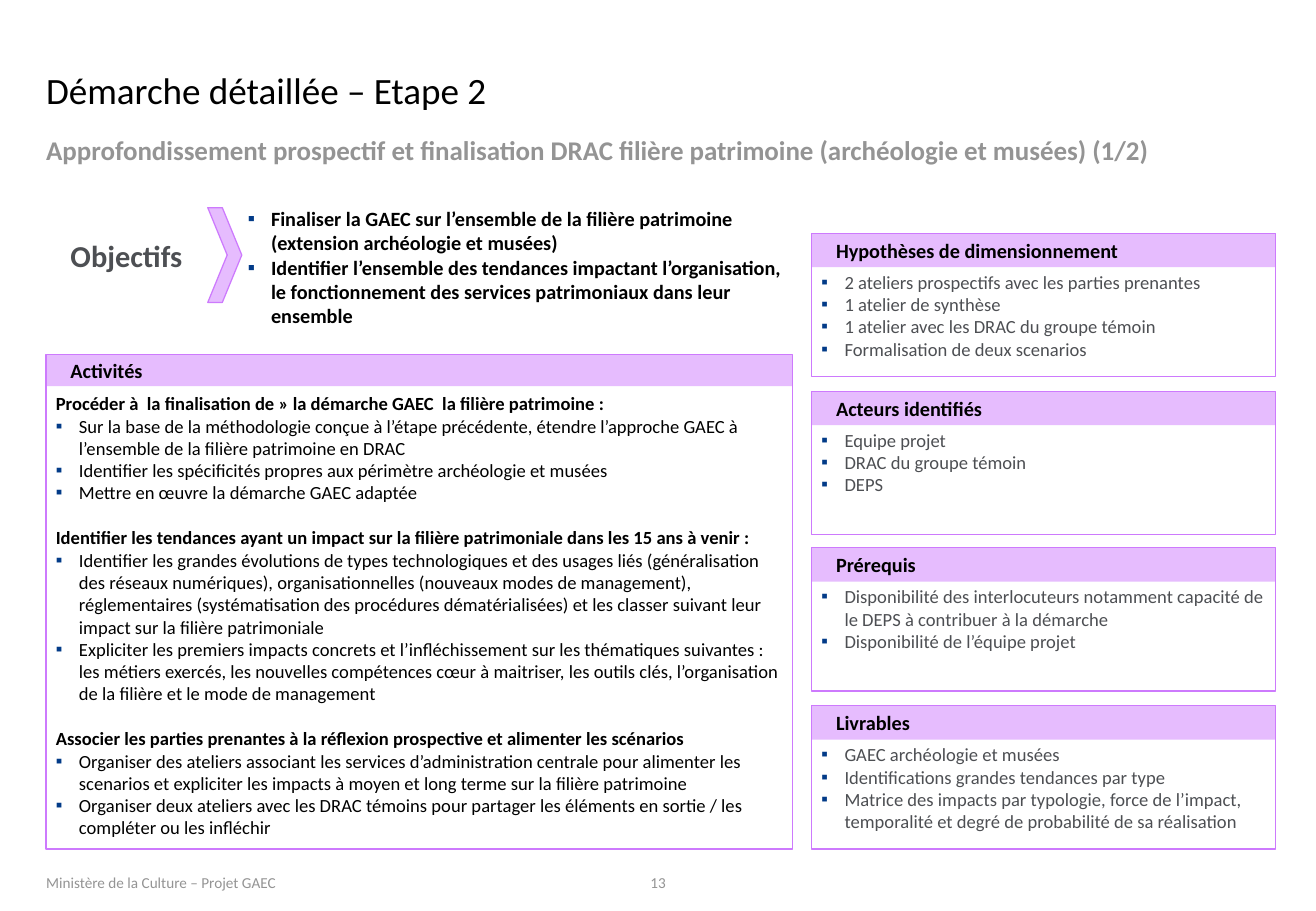
import pptx
import pptx.dml.color
import pptx.enum.shapes
import pptx.enum.text
import pptx.oxml.ns
import pptx.util
from lxml import etree

RGB = pptx.dml.color.RGBColor
SHAPE = pptx.enum.shapes.MSO_SHAPE
ANCHOR = pptx.enum.text.MSO_ANCHOR
ALIGN = pptx.enum.text.PP_ALIGN

BLACK = RGB(0x00, 0x00, 0x00)
WHITE = RGB(0xFF, 0xFF, 0xFF)
GREY = RGB(0x94, 0x94, 0x94)
DARK = RGB(0x4D, 0x4F, 0x53)
NAVY = RGB(0x02, 0x3B, 0x88)
LILAC = RGB(0xE6, 0xBC, 0xFE)
VIOLET = RGB(0xCD, 0x7A, 0xFD)

FONT = "Calibri"
PX = 9144
INDENT = 19
GROUP_GAP = 13.4

OBJECTIVES = [
    "Finaliser la GAEC sur l’ensemble de la filière patrimoine (extension archéologie et musées)",
    "Identifier l’ensemble des tendances impactant l’organisation, le fonctionnement des services patrimoniaux dans leur ensemble",
]
ACTIVITIES = [
    ("Procéder à  la finalisation de » la démarche GAEC  la filière patrimoine :", [
        "Sur la base de la méthodologie conçue à l’étape précédente, étendre l’approche GAEC à l’ensemble de la filière patrimoine en DRAC",
        "Identifier les spécificités propres aux périmètre archéologie et musées",
        "Mettre en œuvre la démarche GAEC adaptée",
    ]),
    ("Identifier les tendances ayant un impact sur la filière patrimoniale dans les 15 ans à venir :", [
        "Identifier les grandes évolutions de types technologiques et des usages liés (généralisation des réseaux numériques), organisationnelles (nouveaux modes de management), réglementaires (systématisation des procédures dématérialisées) et les classer suivant leur impact sur la filière patrimoniale",
        "Expliciter les premiers impacts concrets et l’infléchissement sur les thématiques suivantes : les métiers exercés, les nouvelles compétences cœur à maitriser, les outils clés, l’organisation de la filière et le mode de management",
    ]),
    ("Associer les parties prenantes à la réflexion prospective et alimenter les scénarios", [
        "Organiser des ateliers associant les services d’administration centrale pour alimenter les scenarios et expliciter les impacts à moyen et long terme sur la filière patrimoine",
        "Organiser deux ateliers avec les DRAC témoins pour partager les éléments en sortie / les compléter ou les infléchir",
    ]),
]
SIDE_PANELS = [
    ("Hypothèses de dimensionnement", [
        "2 ateliers prospectifs avec les parties prenantes",
        "1 atelier de synthèse",
        "1 atelier avec les DRAC du groupe témoin",
        "Formalisation de deux scenarios",
    ]),
    ("Acteurs identifiés", ["Equipe projet", "DRAC du groupe témoin", "DEPS"]),
    ("Prérequis", [
        "Disponibilité des interlocuteurs notamment capacité de le DEPS à contribuer à la démarche",
        "Disponibilité de l’équipe projet",
    ]),
    ("Livrables", [
        "GAEC archéologie et musées",
        "Identifications grandes tendances par type",
        "Matrice des impacts par typologie, force de l’impact, temporalité et degré de probabilité de sa réalisation",
    ]),
]


def emu(*lengths):
    return [round(v * PX) for v in lengths]


def setup_frame(sp, margins=(0, 0, 0, 0), anchor=ANCHOR.TOP):
    tf = sp.text_frame
    tf.word_wrap = True
    tf.auto_size = pptx.enum.text.MSO_AUTO_SIZE.NONE
    tf.vertical_anchor = anchor
    tf.margin_left, tf.margin_top, tf.margin_right, tf.margin_bottom = emu(*margins)
    return tf


def add_bullet(p):
    pPr = p._p.get_or_add_pPr()
    indent = INDENT * PX
    pPr.set("marL", str(indent))
    pPr.set("indent", str(-indent))
    qn = pptx.oxml.ns.qn
    color = etree.SubElement(pPr, qn("a:buClr"))
    etree.SubElement(color, qn("a:srgbClr"), val=str(NAVY))
    etree.SubElement(pPr, qn("a:buFont"), typeface=FONT)
    etree.SubElement(pPr, qn("a:buChar"), char="▪")


def add_text(tf, text, size, color, bold=False, bullet=False, align=ALIGN.LEFT, before=0):
    p = tf.paragraphs[0] if not tf.paragraphs[0].runs else tf.add_paragraph()
    if bullet:
        add_bullet(p)
    p.alignment = align
    if before:
        p.space_before = pptx.util.Pt(before)
    r = p.add_run()
    r.text = text
    r.font.name = FONT
    r.font.size = pptx.util.Pt(size)
    r.font.bold = bold
    r.font.color.rgb = color


def style(sp, fill=None, line=None):
    sp.shadow.inherit = False
    if fill is None:
        sp.fill.background()
    else:
        sp.fill.solid()
        sp.fill.fore_color.rgb = fill
    if line is None:
        sp.line.fill.background()
    else:
        sp.line.color.rgb = line
        sp.line.width = pptx.util.Pt(0.75)


def add_label(slide, box, text, size, color, bold=False, anchor=ANCHOR.TOP, align=ALIGN.LEFT):
    sp = slide.shapes.add_textbox(*emu(*box))
    add_text(setup_frame(sp, anchor=anchor), text, size, color, bold, align=align)


def add_heading(slide, x, y, w):
    title = slide.shapes.title
    title.left, title.top, title.width, title.height = emu(x, y, w, 71)
    tf = setup_frame(title, anchor=ANCHOR.BOTTOM)
    add_text(tf, "Démarche détaillée – Etape 2", 22, BLACK)
    add_label(slide, (x, y + 89, w, 37),
              "Approfondissement prospectif et finalisation DRAC filière patrimoine (archéologie et musées) (1/2)",
              16, GREY, bold=True)


def add_objectives(slide, x, y, w, h):
    tag_w = 162
    sp = slide.shapes.add_textbox(*emu(x + tag_w, y - 2, w - tag_w, h))
    tf = setup_frame(sp, (4, 4, 4, 4), ANCHOR.MIDDLE)
    for text in OBJECTIVES:
        add_text(tf, text, 12, BLACK, bold=True, bullet=True)

    tag = slide.shapes.add_shape(SHAPE.PENTAGON, *emu(x, y, tag_w, 87))
    tag.adjustments[0] = 0.11
    style(tag, WHITE)
    add_text(setup_frame(tag, (20, 4, 0, 4), ANCHOR.MIDDLE), "Objectifs", 18, DARK, bold=True)

    left, top = x + 133, y + 4
    outline = [(12, 0), (0, 0), (16, 39), (0, 78), (12, 78)]
    points = [(left + dx, top + dy) for dx, dy in outline]
    fb = slide.shapes.build_freeform(left + 28, top + 39, scale=PX)
    fb.add_line_segments(points, close=True)
    style(fb.convert_to_shape(), LILAC, VIOLET)


def add_panel(slide, box, header_h, title, groups, color):
    x, y, w, h = box
    header = slide.shapes.add_shape(SHAPE.RECTANGLE, *emu(x, y, w, header_h))
    style(header, LILAC)
    add_text(setup_frame(header, (20, 4, 0, 4), ANCHOR.MIDDLE), title, 12, BLACK, bold=True)

    body = slide.shapes.add_shape(SHAPE.RECTANGLE, *emu(x, y, w, h))
    style(body, line=VIOLET)
    tf = setup_frame(body, (8, 31, 4, 4))
    for i, (heading, bullets) in enumerate(groups):
        if heading:
            add_text(tf, heading, 11, color, bold=True, before=GROUP_GAP if i else 0)
        for text in bullets:
            add_text(tf, text, 11, color, bullet=True)


def add_side_panels(slide, x, y, w, h):
    panel_h = 118
    pitch = (h - panel_h) / (len(SIDE_PANELS) - 1)
    for i, (title, bullets) in enumerate(SIDE_PANELS):
        add_panel(slide, (x, round(y + i * pitch), w, panel_h), 28, title, [(None, bullets)], DARK)


def add_footer(slide, x, y):
    add_label(slide, (x, y, 248, 25), "Ministère de la Culture – Projet GAEC", 9, GREY,
              anchor=ANCHOR.BOTTOM)
    add_label(slide, (x + 479, y, 49, 25), "13", 9, GREY, anchor=ANCHOR.BOTTOM, align=ALIGN.CENTER)


def main():
    prs = pptx.Presentation()
    prs.slide_width, prs.slide_height = emu(1083, 750)
    slide = prs.slides.add_slide(prs.slide_layouts.get_by_name("Title Only"))
    add_footer(slide, 38, 709)
    add_heading(slide, 38, 21, 1007)
    add_objectives(slide, 38, 167, 613, 110)
    add_panel(slide, (38, 292, 614, 407), 26, "Activités", ACTIVITIES, BLACK)
    add_side_panels(slide, 668, 192, 382, 507)
    prs.save("out.pptx")


if __name__ == "__main__":
    main()
